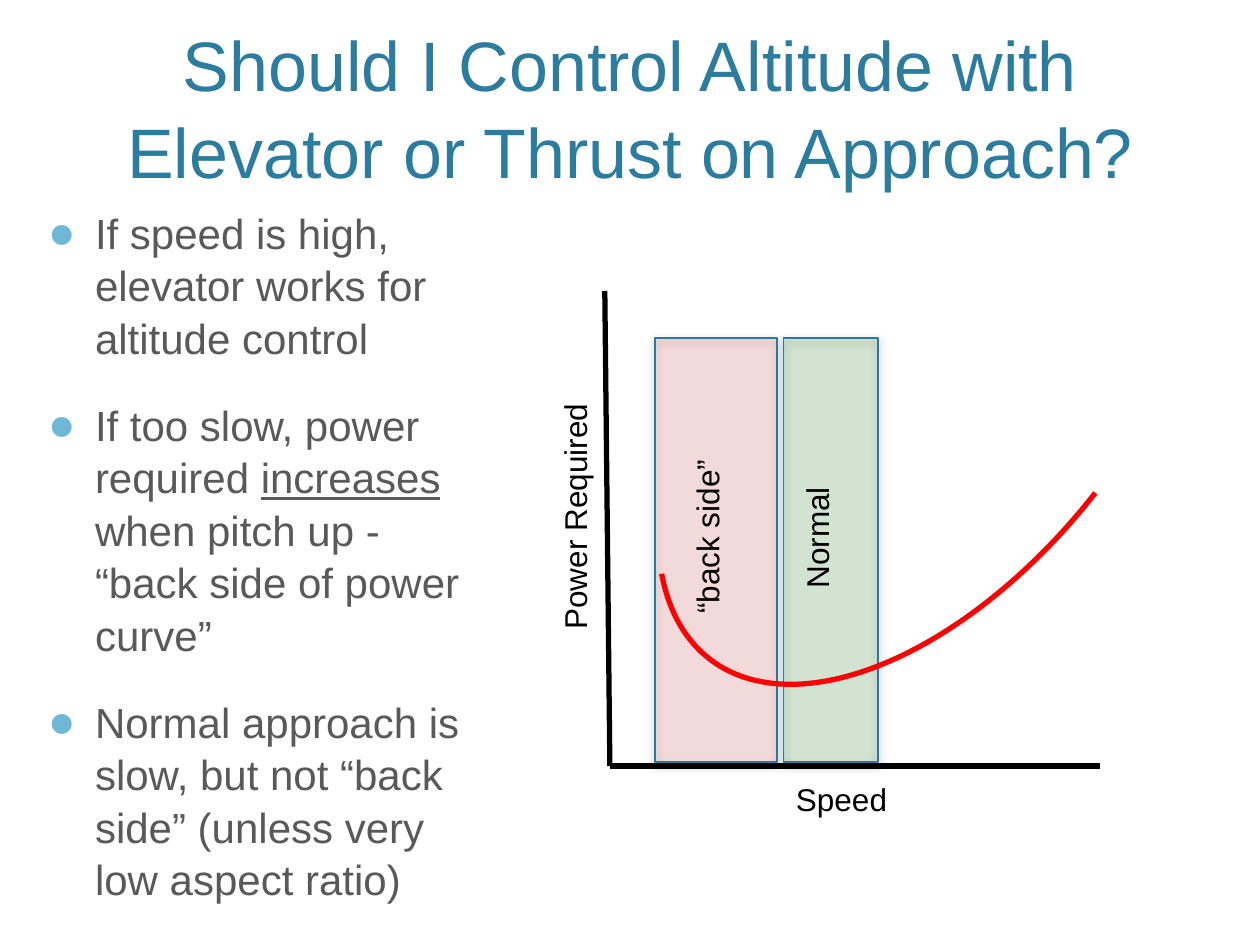
from lxml import etree
from pptx import Presentation
from pptx.dml import color
from pptx.enum import shapes, text
from pptx.oxml import ns
from pptx.util import Pt

# Content
TITLE = "Should I Control Altitude with Elevator or Thrust on Approach?"
BULLETS = [  # each a list of (wording, underlined)
    [("If speed is high, elevator works for altitude control", False)],
    [("If too slow, power required ", False), ("increases", True),
     (" when pitch up - “back side of power curve”", False)],
    [("Normal approach is slow, but not “back side” "
      "(unless very low aspect ratio)", False)],
]
COLORS = {
    "title": "2C7C9F", "body": "595959", "bullet": "6FB7D7", "black": "000000",
    "back side": "FF4040", "normal": "008000", "outline": "287A9E", "curve": "FF0000",
}
FONT = "Arial"
LINE_SPACING = 1.04

# Diagram geometry in points
ORIGIN = (348.5, 437.8)
AXIS_ENDS = [(345.6, 166.3), (628.6, 437.8)]
BAND_TOP, BAND_HEIGHT = 193, 242.6
BANDS = [("back side", 374.4, 69.8), ("normal", 447.8, 54)]  # colour, left, width
CURVE = {"box": (322.6, 91.4, 425.5, 233.3), "rotation": 127.6,
         "angles": (162.9, 9.05)}
LABELS = [  # wording, centre x, centre y, width, rotation
    ("Power Required", 328.3, 294.5, 144.7, 270),
    ("Speed", 481.3, 456.5, 67, 0),
    ("“back side”", 403.9, 306, 103.7, 270),
    ("Normal", 466.6, 306.7, 73.4, 270),
]
LABEL_HEIGHT = 28.8

presentation = Presentation()
presentation.slide_width, presentation.slide_height = Pt(720), Pt(540)
slide = presentation.slides.add_slide(presentation.slide_layouts[6])


def rgb(name):
    return color.RGBColor.from_string(COLORS[name])


def points(values):
    return [Pt(value) for value in values]


def child(parent, tag, **attributes):
    return etree.SubElement(parent, ns.qn(tag),
                            {key: str(value) for key, value in attributes.items()})


def set_line(shape, name, width):
    shape.line.color.rgb = rgb(name)
    shape.line.width = Pt(width)


def add_text(box, paragraphs, size, name, paragraph_format, **frame_format):
    frame = slide.shapes.add_textbox(*points(box))
    for key, value in frame_format.items():
        setattr(frame.text_frame, key, value)
    for index, runs in enumerate(paragraphs):
        paragraph = (frame.text_frame.add_paragraph() if index
                     else frame.text_frame.paragraphs[0])
        for key, value in paragraph_format.items():
            setattr(paragraph, key, value)
        for wording, underlined in runs:
            run = paragraph.add_run()
            run.text = wording
            run.font.color.rgb = rgb(name)
            font_format = {"name": FONT, "size": Pt(size), "underline": underlined}
            for key, value in font_format.items():
                setattr(run.font, key, value)
    return frame


def add_bullet(paragraph):
    properties = paragraph._p.get_or_add_pPr()
    properties.set("marL", str(Pt(27)))
    properties.set("indent", str(-Pt(27)))
    child(child(properties, "a:buClr"), "a:srgbClr", val=COLORS["bullet"])
    child(properties, "a:buSzPct", val=110000)
    child(properties, "a:buFont", typeface=FONT)
    child(properties, "a:buChar", char="●")


def add_shadow(shape):
    effects = child(shape._element.spPr, "a:effectLst")
    shadow = child(effects, "a:outerShdw", blurRad=Pt(5), dist=Pt(2),
                   dir=90 * 60000, rotWithShape=0)
    shade = child(shadow, "a:srgbClr", val=COLORS["black"])
    child(shade, "a:alpha", val=40000)


# Title and bullets
add_text((43.2, 8.6, 633.6, 105.1), [[(TITLE, False)]], 40, "title",
         {"alignment": text.PP_ALIGN.CENTER, "line_spacing": LINE_SPACING},
         word_wrap=True, vertical_anchor=text.MSO_ANCHOR.BOTTOM)
body = add_text((20.2, 113.8, 267.8, 393.8), BULLETS, 24, "body",
                {"space_before": Pt(20), "line_spacing": LINE_SPACING}, word_wrap=True)
for paragraph in body.text_frame.paragraphs:
    add_bullet(paragraph)

# Speed bands
for name, left, width in BANDS:
    band = slide.shapes.add_shape(shapes.MSO_SHAPE.RECTANGLE,
                                  *points((left, BAND_TOP, width, BAND_HEIGHT)))
    band.fill.solid()
    band.fill.fore_color.rgb = rgb(name)
    fill_color = band._element.spPr.find(".//" + ns.qn("a:srgbClr"))
    child(fill_color, "a:alpha", val=13000)
    set_line(band, "outline", 1)
    add_shadow(band)

# Power curve
curve = slide.shapes.add_shape(shapes.MSO_SHAPE.ARC, *points(CURVE["box"]))
curve.rotation = CURVE["rotation"]
for index, angle in enumerate(CURVE["angles"]):
    curve.adjustments[index] = angle
curve.fill.background()
curve.shadow.inherit = False
set_line(curve, "curve", 3)

# Axes
for end in AXIS_ENDS:
    axis = slide.shapes.add_connector(shapes.MSO_CONNECTOR.STRAIGHT,
                                      *points(ORIGIN + end))
    set_line(axis, "black", 3)
    child(axis._element.spPr, "a:effectLst")

# Axis and band labels
for wording, x, y, width, rotation in LABELS:
    box = (x - width / 2, y - LABEL_HEIGHT / 2, width, LABEL_HEIGHT)
    label = add_text(box, [[(wording, False)]], 18, "black", {}, word_wrap=False,
                     auto_size=text.MSO_AUTO_SIZE.SHAPE_TO_FIT_TEXT)
    label.rotation = rotation

presentation.save("out.pptx")
